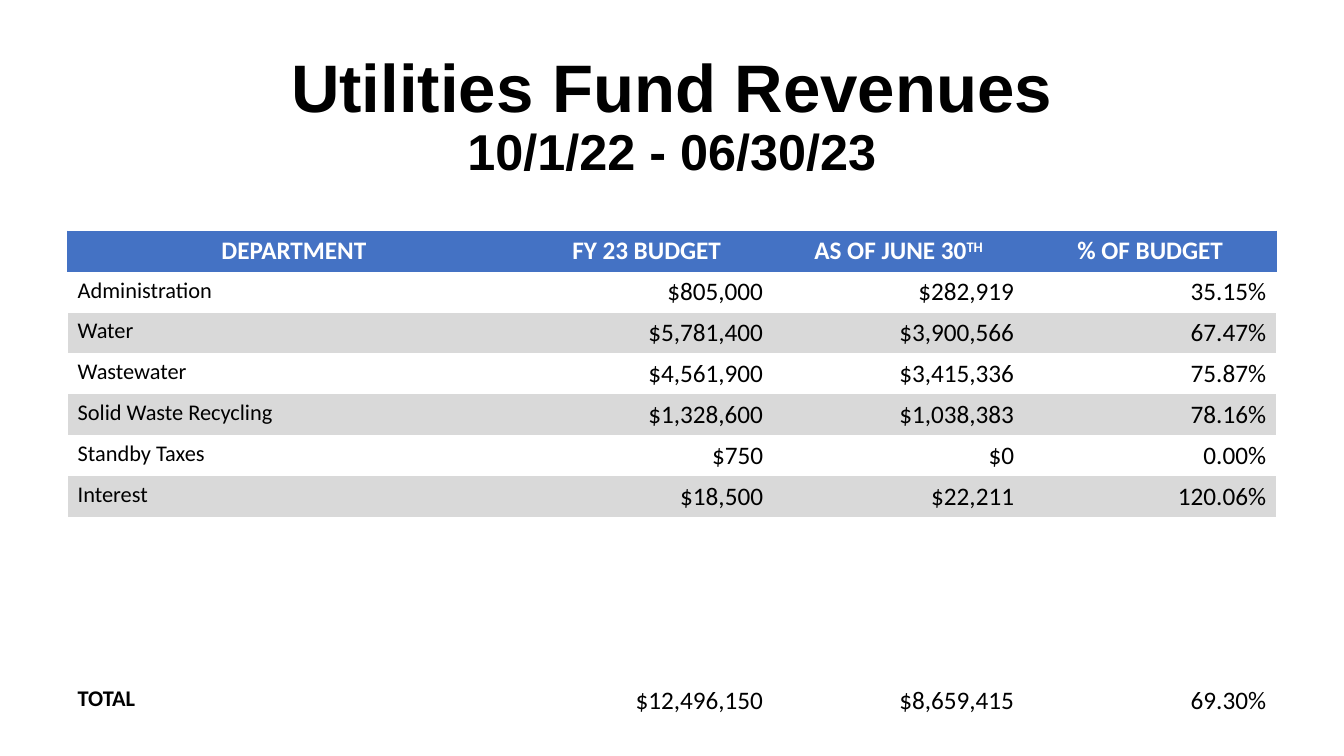
from lxml.etree import SubElement
from pptx import Presentation
from pptx.dml.color import RGBColor
from pptx.enum.text import MSO_ANCHOR, MSO_AUTO_SIZE, PP_ALIGN
from pptx.oxml import parse_xml
from pptx.oxml.ns import nsdecls, qn
from pptx.util import Pt

BLACK = RGBColor(0x00, 0x00, 0x00)
WHITE = RGBColor(0xFF, 0xFF, 0xFF)
BLUE = RGBColor(0x44, 0x72, 0xC4)
GRAY = RGBColor(0xD9, 0xD9, 0xD9)
PLAIN = "{2D5ABB26-0587-4C30-8999-92F81FD0307C}"  # table style without grid

HEADS = ["DEPARTMENT", "FY 23 BUDGET", "AS OF JUNE 30", "% OF BUDGET"]
FUNDS = [
    ["Administration", "$805,000", "$282,919", "35.15%"],
    ["Water", "$5,781,400", "$3,900,566", "67.47%"],
    ["Wastewater", "$4,561,900", "$3,415,336", "75.87%"],
    ["Solid Waste Recycling", "$1,328,600", "$1,038,383", "78.16%"],
    ["Standby Taxes", "$750", "$0", "0.00%"],
    ["Interest", "$18,500", "$22,211", "120.06%"],
]
TOTAL = ["TOTAL", "$12,496,150", "$8,659,415", "69.30%"]
ROWS = 12
WIDTHS = [323.3, 180.7, 179.3, 180]


def style(font, color, **values):
    for name, value in values.items():
        setattr(font, name, value)
    font.color.rgb = color


def add_run(para, text, color, **values):
    run = para.add_run()
    run.text = text
    style(run.font, color, **values)
    return run


def edge(cell, sides):
    # Borders come before the fill in the cell properties
    props = cell._tc.get_or_add_tcPr()
    for spot, side in enumerate(sides):
        props.insert(spot, parse_xml(
            f'<a:ln{side} w="6350" {nsdecls("a")}><a:solidFill>'
            f'<a:srgbClr val="{BLUE}"/></a:solidFill></a:ln{side}>'))


def paint(cell, color):
    if color is None:
        cell.fill.background()
    else:
        cell.fill.solid()
        cell.fill.fore_color.rgb = color


def add_title(slide, left, top, width, height):
    title = slide.shapes.title
    box = {"left": left, "top": top, "width": width, "height": height}
    for name, value in box.items():
        setattr(title, name, Pt(value))
    frame = title.text_frame
    frame.word_wrap = True
    frame.auto_size = MSO_AUTO_SIZE.NONE
    frame.vertical_anchor = MSO_ANCHOR.MIDDLE
    para = frame.paragraphs[0]
    para.alignment = PP_ALIGN.CENTER
    para.line_spacing = 0.9
    look = {"name": "Arial", "bold": True}
    add_run(para, "Utilities Fund Revenues", BLACK, size=Pt(48), **look)
    para.add_line_break()
    add_run(para, "10/1/22 - 06/30/23", BLACK, size=Pt(36), **look)


def add_grid(slide, left, top, width, height):
    table = slide.shapes.add_table(
        ROWS, len(HEADS), Pt(left), Pt(top), Pt(width), Pt(height)).table
    props = table._tbl.tblPr
    mark = props.find(qn("a:tableStyleId"))
    if mark is None:
        mark = SubElement(props, qn("a:tableStyleId"))
    mark.text = PLAIN
    table.horz_banding = False
    for col, size in zip(table.columns, WIDTHS):
        col.width = Pt(size * width / sum(WIDTHS))
    for row in table.rows:
        row.height = Pt(height / ROWS)

    # Header row
    last = len(HEADS) - 1
    for c, text in enumerate(HEADS):
        cell = table.cell(0, c)
        paint(cell, BLUE)
        edge(cell, ("L" if c == 0 else "") + ("R" if c == last else "") + "T")
        para = cell.text_frame.paragraphs[0]
        para.alignment = PP_ALIGN.CENTER
        look = {"name": "Calibri", "size": Pt(18), "bold": True}
        add_run(para, text, WHITE, **look)
        if c == 2:
            power = add_run(para, "TH", WHITE, **look)
            power.font._element.set("baseline", "30000")

    # Funds, empty rows, then the total
    gap = [[""] * len(HEADS)] * (ROWS - len(FUNDS) - 2)
    for r, row in enumerate(FUNDS + gap + [TOTAL], 1):
        band = GRAY if r % 2 == 0 and r <= len(FUNDS) else None
        for c, text in enumerate(row):
            cell = table.cell(r, c)
            paint(cell, band)
            if not text:
                continue
            para = cell.text_frame.paragraphs[0]
            para.alignment = PP_ALIGN.RIGHT if c else PP_ALIGN.LEFT
            add_run(para, text, BLACK, name="Calibri",
                    size=Pt(18 if c else 16), bold=text == "TOTAL")


def main():
    deck = Presentation()
    deck.slide_width, deck.slide_height = Pt(960), Pt(540)
    slide = deck.slides.add_slide(deck.slide_layouts[5])
    add_title(slide, 48.3, 18.7, 863.3, 131)
    add_grid(slide, 48.3, 164.9, 863.3, 350.6)
    deck.save("out.pptx")


if __name__ == "__main__":
    main()
